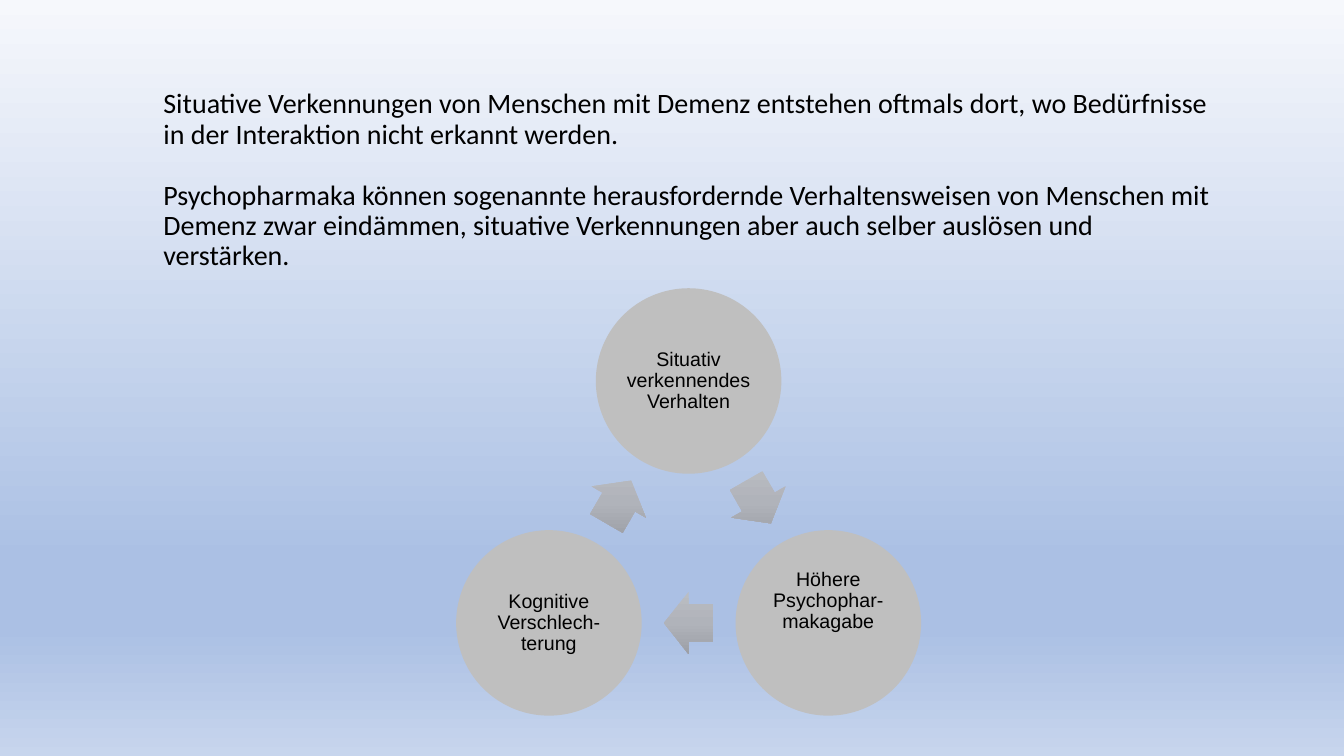
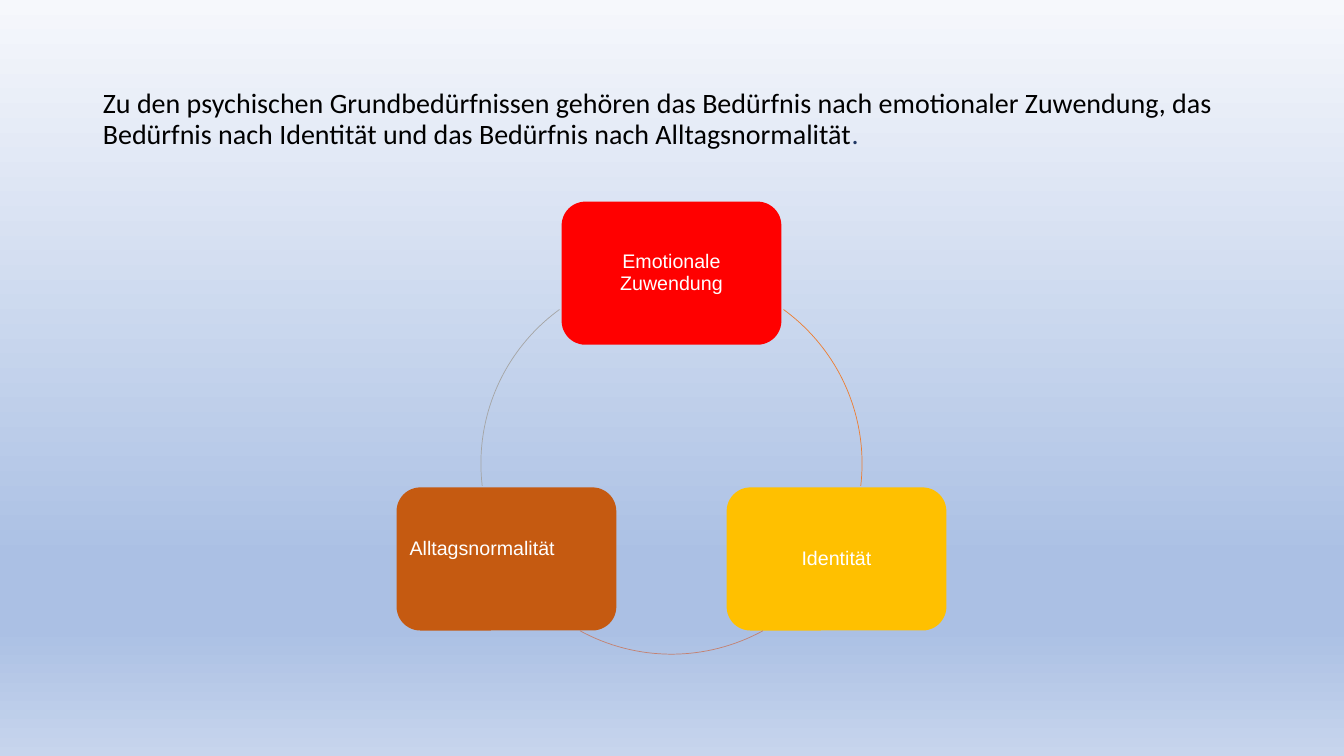
import math

import pptx
import pptx.dml.color
import pptx.enum.shapes
import pptx.enum.text
import pptx.oxml
import pptx.oxml.ns
import pptx.util
from pptx.util import Inches

RGB = pptx.dml.color.RGBColor
SHAPE = pptx.enum.shapes.MSO_SHAPE
ALIGN = pptx.enum.text.PP_ALIGN
ANCHOR = pptx.enum.text.MSO_ANCHOR

BLACK = RGB(0x00, 0x00, 0x00)
WHITE = RGB(0xFF, 0xFF, 0xFF)
NAVY = RGB(0x20, 0x38, 0x64)
GREY = RGB(0xBF, 0xBF, 0xBF)
RED = RGB(0xFF, 0x00, 0x00)
GOLD = RGB(0xFF, 0xC0, 0x00)
BROWN = RGB(0xC5, 0x5A, 0x11)
ORANGE_LINE = RGB(0xED, 0x7D, 0x31)
ROSE_LINE = RGB(0xC4, 0x81, 0x70)
GREY_LINE = RGB(0xA5, 0xA5, 0xA5)

PAGE_STOPS = [
    (0, RGB(0xF6, 0xF8, 0xFC)),
    (74, RGB(0xAB, 0xC0, 0xE4)),
    (83, RGB(0xAB, 0xC0, 0xE4)),
    (100, RGB(0xC7, 0xD5, 0xED)),
]
ARROW_STOPS = [
    (0, RGB(0xBA, 0xBD, 0xC2)),
    (50, RGB(0xB0, 0xB3, 0xBA)),
    (100, RGB(0x9C, 0x9F, 0xA6)),
]

SPIRAL_TITLE = [
    [("Situative Verkennungen von Menschen mit Demenz entstehen oftmals dort, "
      "wo Bedürfnisse in der Interaktion nicht erkannt werden.", BLACK)],
    [("Psychopharmaka können sogenannte herausfordernde Verhaltensweisen von "
      "Menschen mit Demenz zwar eindämmen, situative Verkennungen aber auch "
      "selber auslösen und verstärken.", BLACK)],
]
NEEDS_TITLE = [
    [("Zu den psychischen Grundbedürfnissen gehören das Bedürfnis nach "
      "emotionaler Zuwendung, das Bedürfnis nach Identität und das Bedürfnis "
      "nach Alltagsnormalität", BLACK), (".", NAVY)],
]

SPIRAL_STEPS = [
    ("Situativ verkennendes Verhalten", 0),
    ("Höhere Psychophar-makagabe", 0.43),
    ("Kognitive Verschlech-terung", 0),
]
NEEDS = [
    ("Emotionale Zuwendung", RED, ALIGN.CENTER, 0),
    ("Identität", GOLD, ALIGN.CENTER, 0),
    ("Alltagsnormalität", BROWN, ALIGN.LEFT, 0.2),
]
NEED_ARCS = [
    (306, 6.7, ORANGE_LINE),
    (61.3, 118.7, ROSE_LINE),
    (173.3, 234, GREY_LINE),
]

CORNER_ANGLES = (-90, 30, 150)
SPIRAL_CENTER, SPIRAL_RADIUS = (6.83, 5.38), 1.6
NEEDS_CENTER, NEEDS_RADIUS = (6.66, 4.6), 1.89


def paint_gradient(owner, fill, stops):
    fill.gradient()
    fill.gradient_angle = 270
    stop_list = next(owner.element.iter(pptx.oxml.ns.qn("a:gsLst")))
    for old_stop in list(stop_list):
        stop_list.remove(old_stop)
    for percent, color in stops:
        stop_list.append(pptx.oxml.parse_xml(
            f'<a:gs {pptx.oxml.ns.nsdecls("a")} pos="{percent * 1000}">'
            f'<a:srgbClr val="{color}"/></a:gs>'))
    return stop_list.getparent()


def point_on_ring(center, radius, angle):
    turn = math.radians(angle)
    return center[0] + radius * math.cos(turn), center[1] + radius * math.sin(turn)


def add_centered(page, kind, center, width, height):
    shape = page.shapes.add_shape(
        kind, Inches(center[0] - width / 2), Inches(center[1] - height / 2),
        Inches(width), Inches(height))
    shape.shadow.inherit = False
    shape.line.fill.background()
    return shape


def add_label(shape, text, fill_color, text_color, inset, lift=0, alignment=ALIGN.CENTER):
    shape.fill.solid()
    shape.fill.fore_color.rgb = fill_color
    frame = shape.text_frame
    frame.word_wrap = True
    frame.vertical_anchor = ANCHOR.MIDDLE
    frame.margin_left = frame.margin_right = frame.margin_top = Inches(inset)
    frame.margin_bottom = Inches(inset + lift)
    para = frame.paragraphs[0]
    para.text = text
    para.alignment = alignment
    para.line_spacing = 0.9
    para.font.name = "Arial"
    para.font.size = pptx.util.Pt(14)
    para.font.color.rgb = text_color


def add_page(deck, paragraphs, left, width, height):
    page = deck.slides.add_slide(deck.slide_layouts.get_by_name("Title Only"))
    title = page.shapes.title
    title.left, title.top = Inches(left), Inches(0.4)
    title.width, title.height = Inches(width), Inches(height)
    frame = title.text_frame
    frame.auto_size = pptx.enum.text.MSO_AUTO_SIZE.NONE
    frame.vertical_anchor = ANCHOR.TOP
    frame.margin_top = Inches(0.49)
    for index, spans in enumerate(paragraphs):
        para = frame.add_paragraph() if index else frame.paragraphs[0]
        para.alignment = ALIGN.LEFT
        para.line_spacing = 0.9
        para.space_before = pptx.util.Pt(22 if index else 0)
        para.font.name = "Calibri"
        para.font.size = pptx.util.Pt(20)
        for text, color in spans:
            span = para.add_run()
            span.text = text
            span.font.color.rgb = color
    return page


def build_spiral(deck):
    page = add_page(deck, SPIRAL_TITLE, 1.52, 10.62, 2.46)
    for angle, (text, lift) in zip(CORNER_ANGLES, SPIRAL_STEPS):
        center = point_on_ring(SPIRAL_CENTER, SPIRAL_RADIUS, angle)
        circle = add_centered(page, SHAPE.OVAL, center, 1.84, 1.84)
        add_label(circle, text, GREY, BLACK, 0.02, lift)
        middle = point_on_ring(SPIRAL_CENTER, SPIRAL_RADIUS / 2, angle + 60)
        arrow = add_centered(page, SHAPE.RIGHT_ARROW, middle, 0.49, 0.62)
        arrow.adjustments[0] = 0.6
        arrow.adjustments[1] = 0.5
        arrow.rotation = angle + 150
        gradient = paint_gradient(arrow, arrow.fill, ARROW_STOPS)
        gradient.set("rotWithShape", "0")


def build_needs(deck):
    page = add_page(deck, NEEDS_TITLE, 0.92, 11.5, 1.45)
    for angle, need, (start, end, color) in zip(CORNER_ANGLES, NEEDS, NEED_ARCS):
        text, fill_color, alignment, lift = need
        center = point_on_ring(NEEDS_CENTER, NEEDS_RADIUS, angle)
        box = add_centered(page, SHAPE.ROUNDED_RECTANGLE, center, 2.18, 1.42)
        add_label(box, text, fill_color, WHITE, 0.06, lift, alignment)
        arc = add_centered(page, SHAPE.ARC, NEEDS_CENTER, 2 * NEEDS_RADIUS, 2 * NEEDS_RADIUS)
        arc.adjustments[0] = start * 0.6
        arc.adjustments[1] = end * 0.6
        arc.fill.background()
        arc.line.color.rgb = color
        arc.line.width = pptx.util.Pt(0.5)


def main():
    deck = pptx.Presentation()
    deck.slide_width, deck.slide_height = Inches(13.33), Inches(7.5)
    master = deck.slide_master
    paint_gradient(master, master.background.fill, PAGE_STOPS)
    build_spiral(deck)
    build_needs(deck)
    deck.save("out.pptx")


if __name__ == "__main__":
    main()
